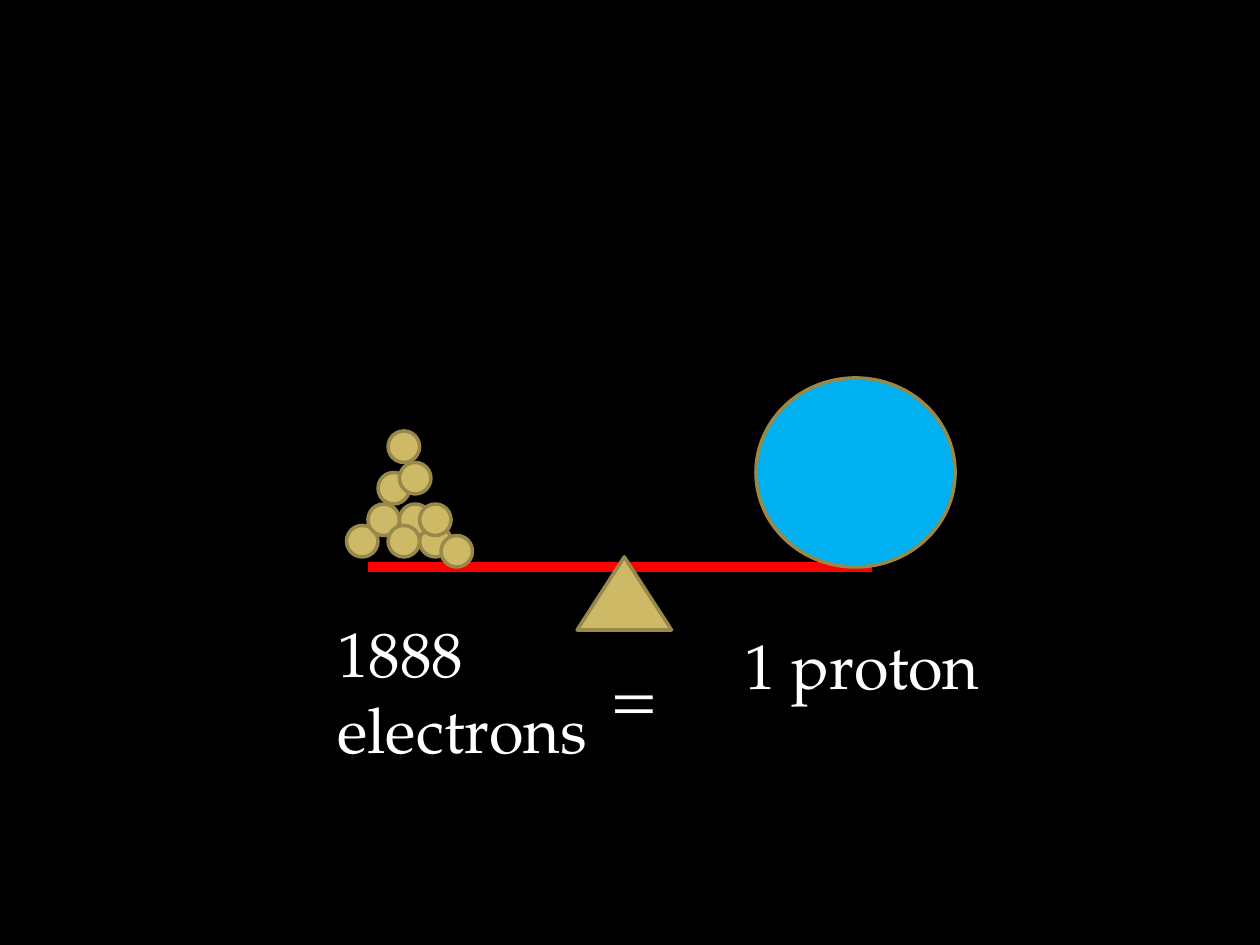
"""Build a slide that balances electrons against one proton."""
import pptx
import pptx.dml.color
import pptx.enum.shapes
import pptx.enum.text
import pptx.oxml.ns
import pptx.util
from lxml import etree

Inches, Pt = pptx.util.Inches, pptx.util.Pt
RGBColor = pptx.dml.color.RGBColor
KIND = pptx.enum.shapes.MSO_SHAPE

BLACK = RGBColor(0x00, 0x00, 0x00)
WHITE = RGBColor(0xFF, 0xFF, 0xFF)
RED = RGBColor(0xFF, 0x00, 0x00)
GOLD = RGBColor(0xCE, 0xB9, 0x66)
BROWN = RGBColor(0x98, 0x89, 0x4B)
BLUE = RGBColor(0x00, 0xB0, 0xF0)
FONT = "TeX Gyre Pagella"

SIZE = 0.25
ELECTRONS = [
    (2.75, 4.17), (3.33, 4.17), (2.92, 4), (3.17, 4), (3.5, 4.25),
    (3.33, 4), (3, 3.75), (3.17, 3.67), (3.08, 4.17), (3.08, 3.42),
]
BEAM = (2.92, 4.5, 6.92, 4.5)
PROTON = (6, 3, 1.58, 1.5)
PIVOT = (4.58, 4.42, 0.75, 0.58)
LABELS = [
    ((2.58, 4.83, 2.21, 1.31), [[("1888", 36)], [("electrons", 36)]]),
    ((4.75, 5.17, 0.51, 0.71), [[("=", 36)]]),
    ((5.75, 4.92, 2.16, 0.71), [[(" ", 18), ("1 proton", 36)]]),
]


def add_beam(slide, ends):
    kind = pptx.enum.shapes.MSO_CONNECTOR.STRAIGHT
    beam = slide.shapes.add_connector(kind, *map(Inches, ends))
    beam.line.color.rgb = RED
    beam.line.width = Pt(6)
    etree.SubElement(beam._element.spPr, pptx.oxml.ns.qn("a:effectLst"))


def add_solid(slide, kind, box, color):
    solid = slide.shapes.add_shape(kind, *map(Inches, box))
    solid.shadow.inherit = False
    solid.fill.solid()
    solid.fill.fore_color.rgb = color
    solid.line.color.rgb = BROWN
    solid.line.width = Pt(2)


def add_label(slide, box, lines):
    frame = slide.shapes.add_textbox(*map(Inches, box)).text_frame
    frame.word_wrap = False
    frame.auto_size = pptx.enum.text.MSO_AUTO_SIZE.SHAPE_TO_FIT_TEXT
    for i, line in enumerate(lines):
        para = frame.add_paragraph() if i else frame.paragraphs[0]
        for text, size in line:
            run = para.add_run()
            run.text = text
            run.font.name = FONT
            run.font.size = Pt(size)
            run.font.color.rgb = WHITE


def main():
    deck = pptx.Presentation()
    deck.slide_width, deck.slide_height = Inches(10), Inches(7.5)
    slide = deck.slides.add_slide(deck.slide_layouts[6])
    slide.background.fill.solid()
    slide.background.fill.fore_color.rgb = BLACK

    add_beam(slide, BEAM)
    for left, top in ELECTRONS:
        add_solid(slide, KIND.OVAL, (left, top, SIZE, SIZE), GOLD)
    for box, lines in LABELS:
        add_label(slide, box, lines)
    add_solid(slide, KIND.OVAL, PROTON, BLUE)
    add_solid(slide, KIND.ISOSCELES_TRIANGLE, PIVOT, GOLD)
    deck.save("out.pptx")


if __name__ == "__main__":
    main()
